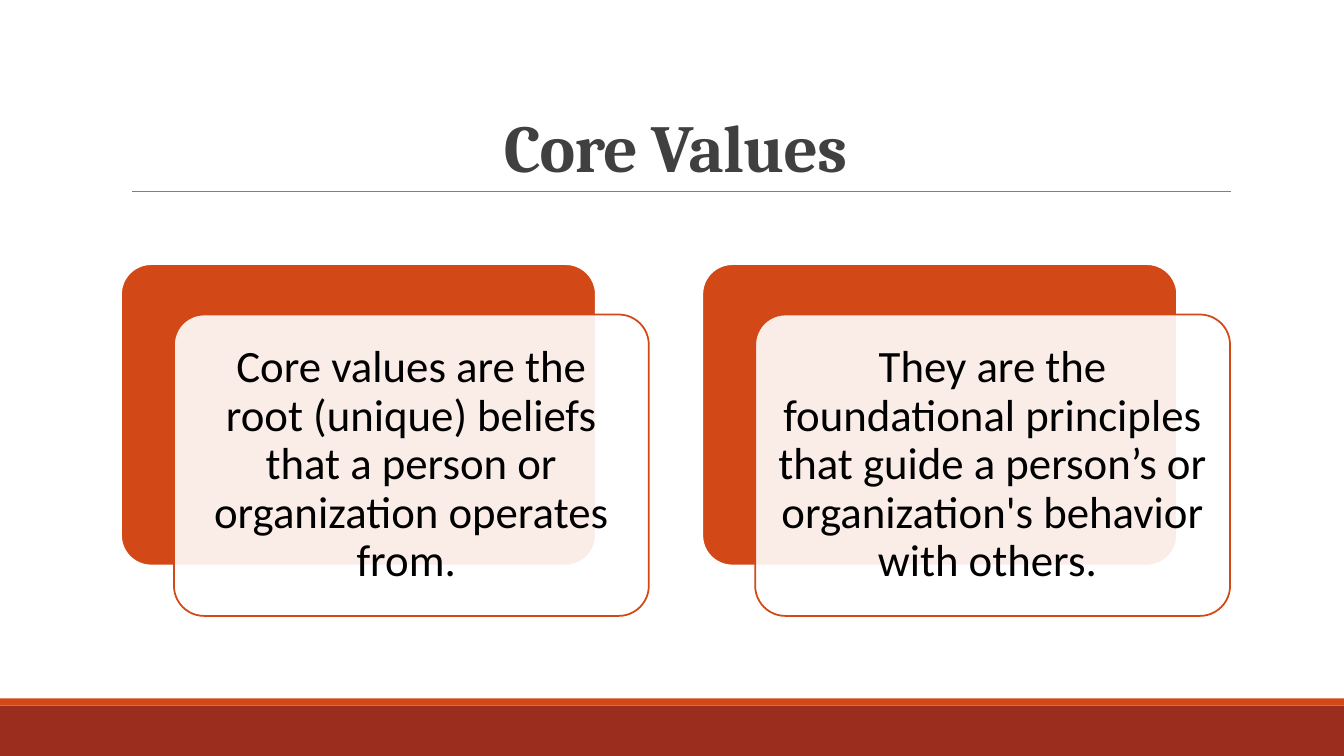
from lxml import etree
from pptx import Presentation
from pptx.dml.color import RGBColor
from pptx.enum import shapes, text
from pptx.oxml.ns import qn
from pptx.util import Inches, Pt

TITLE = "Core Values"
VALUES = [
    "Core values are the root (unique) beliefs that a person or organization operates from. ",
    "They are the foundational principles that guide a person’s or organization's behavior with others. ",
]
COLORS = {
    "orange": "D34817",
    "brick": "9B2D1F",
    "rule": "808080",
    "title": "404040",
    "black": "000000",
    "white": "FFFFFF",
}
BANDS = [(7, 0.5, "brick"), (6.93, 0.07, "orange")]
CARD_LEFT, CARD_TOP, CARD_STEP = 1.2, 2.62, 5.765
CARD_WIDTH, CARD_HEIGHT = 4.71, 2.99
FRONT_SHIFT_X, FRONT_SHIFT_Y = 0.525, 0.5
TEXT_INSET = 0.085


def color(name):
    return RGBColor.from_string(COLORS[name])


def add_block(page, kind, place, fill, line=None, opacity=None):
    block = page.shapes.add_shape(kind, *map(Inches, place))
    block.shadow.inherit = False
    block.fill.solid()
    block.fill.fore_color.rgb = color(fill)
    if line:
        block.line.color.rgb = color(line)
        block.line.width = Pt(1.25)
        block.adjustments[0] = 0.1
    else:
        block.line.fill.background()
    if opacity:
        tint = block.fill._xPr.find(".//" + qn("a:srgbClr"))
        etree.SubElement(tint, qn("a:alpha")).set("val", str(opacity * 1000))


def add_text(page, words, place, font, size, ink, anchor, spacing, inset=None):
    box = page.shapes.add_textbox(*map(Inches, place))
    frame = box.text_frame
    frame.word_wrap = True
    frame.vertical_anchor = anchor
    if inset:
        frame.margin_left = frame.margin_right = Inches(inset)
        frame.margin_top = frame.margin_bottom = Inches(inset)
    para = frame.paragraphs[0]
    para.alignment = text.PP_ALIGN.CENTER
    para.line_spacing = spacing
    span = para.add_run()
    span.text = words
    span.font.name = font
    span.font.size = Pt(size)
    span.font.color.rgb = color(ink)
    return span


def add_rule(page):
    rule = page.shapes.add_connector(
        shapes.MSO_CONNECTOR.STRAIGHT, Inches(1.31), Inches(1.9), Inches(12.21), Inches(1.9)
    )
    rule.line.color.rgb = color("rule")
    rule.line.width = Pt(0.5)
    etree.SubElement(rule._element.spPr, qn("a:effectLst"))


def add_card(page, left, words):
    rounded = shapes.MSO_SHAPE.ROUNDED_RECTANGLE
    size = (CARD_WIDTH, CARD_HEIGHT)
    front_left, front_top = left + FRONT_SHIFT_X, CARD_TOP + FRONT_SHIFT_Y
    add_block(page, rounded, (left, CARD_TOP, *size), "orange", "white")
    add_block(page, rounded, (front_left, front_top, *size), "white", "orange", 90)
    place = (
        front_left + TEXT_INSET,
        front_top + TEXT_INSET,
        CARD_WIDTH - 2 * TEXT_INSET,
        CARD_HEIGHT - 2 * TEXT_INSET,
    )
    add_text(page, words, place, "Calibri", 32, "black", text.MSO_ANCHOR.MIDDLE, 0.9, 0.13)


def main():
    deck = Presentation()
    deck.slide_width, deck.slide_height = Inches(13.33), Inches(7.5)
    page = deck.slides.add_slide(deck.slide_layouts[6])
    for top, height, fill in BANDS:
        add_block(page, shapes.MSO_SHAPE.RECTANGLE, (0, top, 13.33, height), fill)
    add_rule(page)
    title = add_text(
        page, TITLE, (1.2, 0.31, 11, 1.59), "Cambria", 48, "title", text.MSO_ANCHOR.BOTTOM, 0.85
    )
    title.font.bold = True
    title.font._element.set("spc", "-50")
    for index, words in enumerate(VALUES):
        add_card(page, CARD_LEFT + index * CARD_STEP, words)
    deck.save("out.pptx")


if __name__ == "__main__":
    main()
